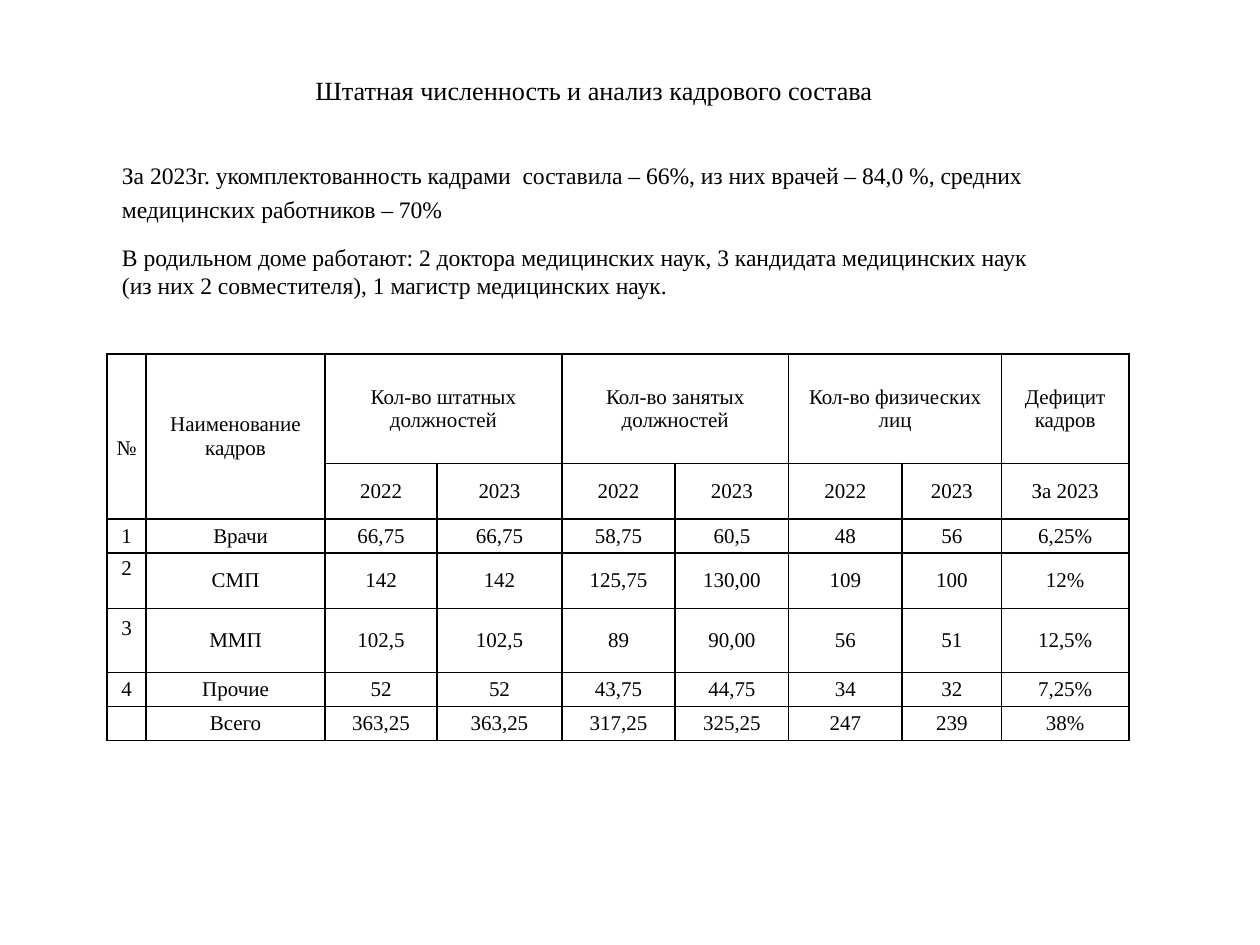
import pptx
import pptx.dml.color
import pptx.enum.text
import pptx.oxml
import pptx.oxml.ns
import pptx.util

ALIGN = pptx.enum.text.PP_ALIGN
ANCHOR = pptx.enum.text.MSO_ANCHOR
LINE = 1.9  # height of one line of table text, in grid units


def unit(count):
    """Length of a number of grid steps; the slide is 100 columns by 75 rows."""
    return pptx.util.Inches(count / 10)


def color(code):
    return pptx.dml.color.RGBColor.from_string(code)


class Page:
    """Holds the slide and its style."""
    font = "Times New Roman"
    ink = "000000"
    paper = "FFFFFF"

    def __init__(self, deck):
        self.slide = deck.slides.add_slide(deck.slide_layouts[6])

    def put(self, para, text, size, align, space=None):
        """Add one styled run to a paragraph."""
        para.alignment = align
        if space:
            para.line_spacing = space
        run = para.add_run()
        run.text = text
        run.font.size = pptx.util.Pt(size)
        run.font.name = self.font
        run.font.color.rgb = color(self.ink)

    def text(self, place, lines, size, align=ALIGN.LEFT, space=None,
             anchor=ANCHOR.MIDDLE):
        box = self.slide.shapes.add_textbox(*map(unit, place))
        frame = box.text_frame
        frame.word_wrap = True
        frame.vertical_anchor = anchor
        for num, line in enumerate(lines):
            para = frame.add_paragraph() if num else frame.paragraphs[0]
            self.put(para, line, size, align, space)

    def edge(self, cell):
        props = cell._tc.get_or_add_tcPr()
        for side in "LRTB":
            props.append(pptx.oxml.parse_xml(
                f'<a:ln{side} {pptx.oxml.ns.nsdecls("a")} w="12700">'
                f'<a:solidFill><a:srgbClr val="{self.ink}"/></a:solidFill>'
                f'</a:ln{side}>'))

    def cell(self, cell, text, size):
        self.edge(cell)
        cell.fill.solid()
        cell.fill.fore_color.rgb = color(self.paper)
        cell.vertical_anchor = ANCHOR.MIDDLE
        cell.margin_left = cell.margin_right = unit(0.6)
        cell.margin_top = cell.margin_bottom = 0
        para = cell.text_frame.paragraphs[0]
        if text:
            self.put(para, text, size, ALIGN.CENTER)
        else:  # keeps an empty cell from stretching its row
            para._p.append(pptx.oxml.parse_xml(
                f'<a:endParaRPr {pptx.oxml.ns.nsdecls("a")} sz="{size * 100}"/>'))

    def table(self, left, top, cols, rows, data, spans, size):
        frame = self.slide.shapes.add_table(
            len(rows), len(cols), unit(left), unit(top),
            unit(sum(cols)), unit(sum(rows)))
        table = frame.table
        table.first_row = table.horz_banding = False
        for col, width in zip(table.columns, cols):
            col.width = unit(width)
        for row, height in zip(table.rows, rows):
            row.height = unit(height)
        for y, line in enumerate(data):
            for x, text in enumerate(line):
                self.cell(table.cell(y, x), text, size)
        for start, end in spans:
            table.cell(*start).merge(table.cell(*end))
        return table


def main():
    deck = pptx.Presentation()
    deck.slide_width, deck.slide_height = unit(100), unit(75)
    page = Page(deck)

    page.text((8.7, 11.2, 75, 7.7), [
        "За 2023г. укомплектованность кадрами  составила – 66%, из них "
        "врачей – 84,0 %, средних медицинских работников – 70%"],
        13.5, space=1.2)
    page.text((8.7, 18.8, 83.6, 5.6), [
        "В родильном доме работают: 2 доктора медицинских наук, "
        "3 кандидата медицинских наук",
        "(из них 2 совместителя), 1 магистр медицинских наук."],
        13.5, ALIGN.JUSTIFY, anchor=ANCHOR.TOP)

    data = [
        ["№", "Наименование кадров", "Кол-во штатных должностей", "",
         "Кол-во занятых должностей", "", "Кол-во физических лиц", "",
         "Дефицит кадров"],
        ["", ""] + ["2022", "2023"] * 3 + ["За 2023"],
        ["1", "Врачи", "66,75", "66,75", "58,75", "60,5", "48", "56", "6,25%"],
        ["2", "СМП", "142", "142", "125,75", "130,00", "109", "100", "12%"],
        ["3", "ММП", "102,5", "102,5", "89", "90,00", "56", "51", "12,5%"],
        ["4", "Прочие", "52", "52", "43,75", "44,75", "34", "32", "7,25%"],
        ["", "Всего", "363,25", "363,25", "317,25", "325,25", "247", "239",
         "38%"],
    ]
    tall = [((0, x), (1, x)) for x in (0, 1)]
    wide = [((0, x), (0, x + 1)) for x in (2, 4, 6)]
    staff = page.table(
        8.5, 28.1, [3.1, 14.2, 8.9, 9.9, 9, 9, 9, 7.9, 10.1],
        [8.7, 4.4, 2.7, 4.4, 5.1, 2.7, 2.7], data, tall + wide, 12)
    staff.cell(0, 0).margin_top = unit(LINE)
    for row in (3, 4):
        staff.cell(row, 0).margin_bottom = unit(LINE)
    staff.cell(2, 1).margin_left = unit(1.4)

    page.text((12.7, 5.8, 68.9, 3),
              ["Штатная численность и анализ кадрового состава"],
              15, ALIGN.CENTER, 0.9)
    deck.save("out.pptx")


if __name__ == "__main__":
    main()
